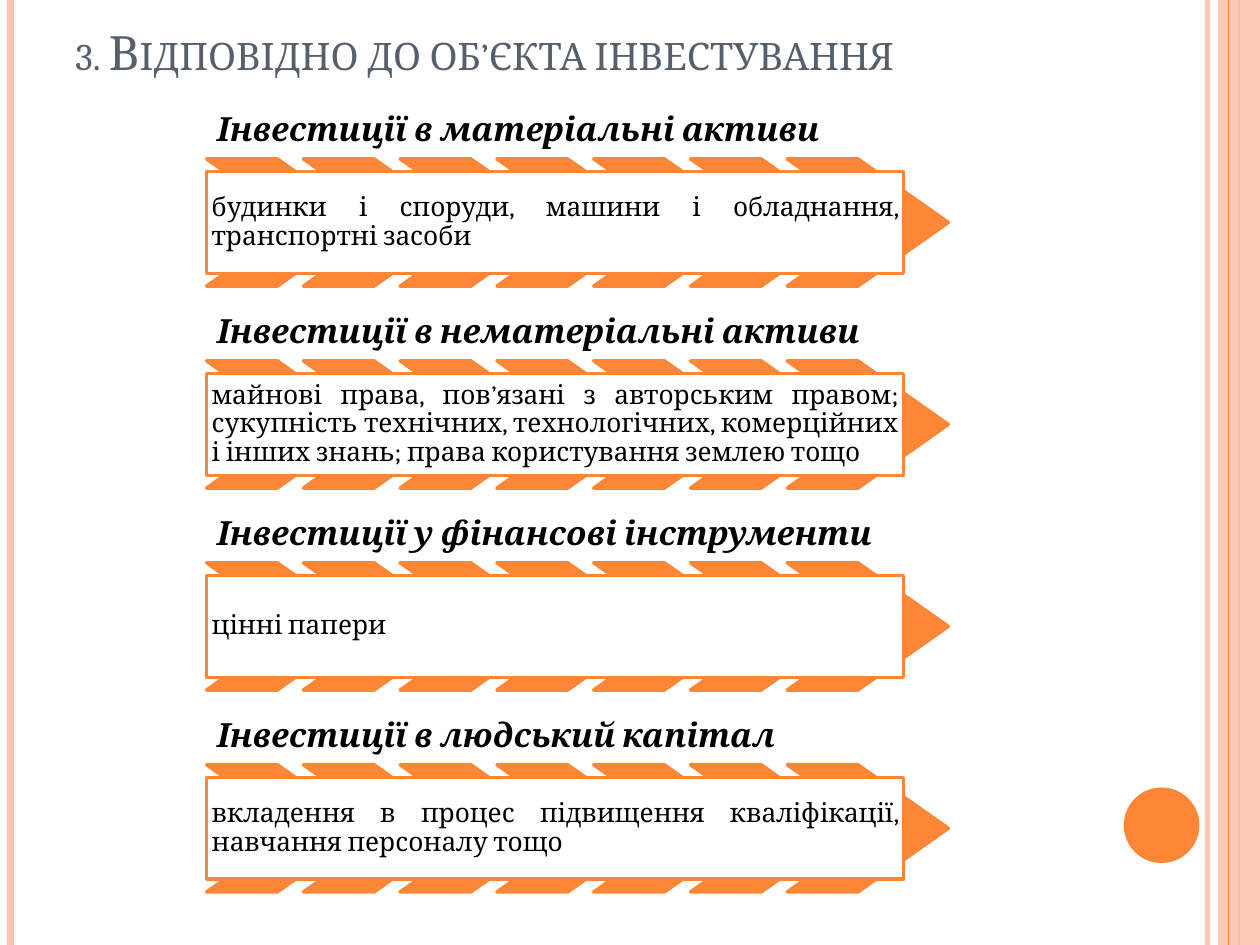
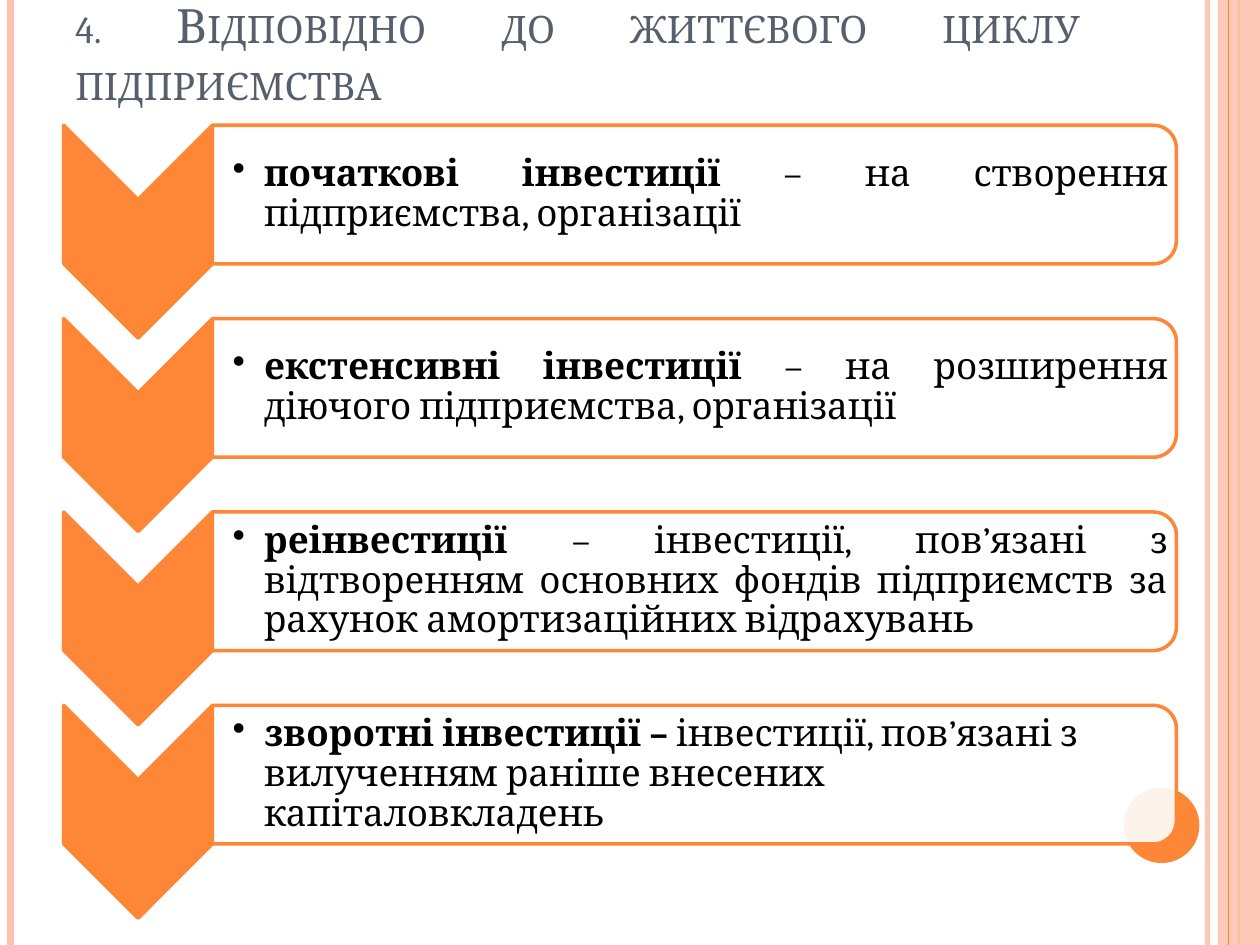
import pptx
import pptx.util
import pptx.dml.color
import pptx.enum.shapes
import pptx.enum.text
from lxml import etree

Pt = pptx.util.Pt
RGBColor = pptx.dml.color.RGBColor
Shape = pptx.enum.shapes.MSO_SHAPE
Anchor = pptx.enum.text.MSO_ANCHOR
Align = pptx.enum.text.PP_ALIGN

# Content
OBJECT_TITLE = "3. Відповідно до об’єкта інвестування"
OBJECTS = [
    ("Інвестиції в матеріальні активи",
     "будинки і споруди, машини і обладнання, транспортні засоби"),
    ("Інвестиції в нематеріальні активи",
     "майнові права, пов’язані з авторським правом; сукупність технічних, "
     "технологічних, комерційних і інших знань; права користування землею тощо"),
    ("Інвестиції у фінансові інструменти", "цінні папери"),
    ("Інвестиції в людський капітал",
     "вкладення в процес підвищення кваліфікації, навчання персоналу тощо"),
]
CYCLE_TITLE = "4. Відповідно до життєвого циклу підприємства"
CYCLE = [
    ("початкові інвестиції ", "– на створення підприємства, організації", Align.JUSTIFY),
    ("екстенсивні інвестиції ", "– на розширення діючого підприємства, організації",
     Align.JUSTIFY),
    ("реінвестиції ",
     "– інвестиції, пов’язані з відтворенням основних фондів підприємств "
     "за рахунок амортизаційних відрахувань", Align.JUSTIFY),
    ("зворотні інвестиції – ",
     "інвестиції, пов’язані з вилученням раніше внесених капіталовкладень", Align.LEFT),
]

# Shared look
FONT = "Cambria"
ORANGE = RGBColor(0xFE, 0x86, 0x37)
PEACH = RGBColor(0xFE, 0xC3, 0xAE)
SLATE = RGBColor(0x57, 0x5F, 0x6D)
BLACK = RGBColor(0, 0, 0)
WHITE = RGBColor(0xFF, 0xFF, 0xFF)
WIDTH, HEIGHT = 720, 540
OUTLINE = 2
DRAWING = "http://schemas.openxmlformats.org/drawingml/2006/main"

# Rows of the first slide
OBJECT_LEFT, OBJECT_TOP, OBJECT_PITCH = 118.1, 54.8, 115.4
HEADING_WIDTH, HEADING_HEIGHT = 393, 36
CHEVRON_COUNT, CHEVRON_STEP = 7, 55.3
CHEVRON_WIDTH, CHEVRON_HEIGHT = 92, 72.7
BOX_WIDTH, BOX_HEIGHT = 398.3, 58.2

# Rows of the second slide
CYCLE_LEFT, CYCLE_TOP, CYCLE_PITCH = 36.4, 71.6, 110.5
ARROW_WIDTH, ARROW_HEIGHT = 85, 121.6
PANEL_WIDTH, PANEL_HEIGHT = 550.8, 79.2


def tag(name):
    return f"{{{DRAWING}}}{name}"


def set_opacity(element, percent):
    """Make the first colour inside element partly transparent."""
    color = next(element.iter(tag("srgbClr")))
    etree.SubElement(color, tag("alpha"), val=str(percent * 1000))


def write(shape, text, size, color=BLACK, bold=False, italic=False, small_caps=False,
          align=Align.LEFT, anchor=Anchor.MIDDLE, insets=(7.2, 3.6, 7.2, 3.6),
          line_spacing=None, bullet_indent=None, rest=""):
    """Fill shape with one paragraph; rest follows text without bold."""
    frame = shape.text_frame
    frame.word_wrap = True
    frame.vertical_anchor = anchor
    (frame.margin_left, frame.margin_top,
     frame.margin_right, frame.margin_bottom) = map(Pt, insets)
    paragraph = frame.paragraphs[0]
    paragraph.alignment = align
    if line_spacing:
        paragraph.line_spacing = line_spacing
    if bullet_indent:
        properties = paragraph._p.get_or_add_pPr()
        properties.set("marL", str(Pt(bullet_indent)))
        properties.set("indent", str(-Pt(bullet_indent)))
        etree.SubElement(properties, tag("buChar"), char="•")
    for part, is_bold in ((text, bold), (rest, False)):
        if not part:
            continue
        run = paragraph.add_run()
        run.text = part
        run.font.name = FONT
        run.font.size = Pt(size)
        run.font.bold = is_bold
        run.font.italic = italic
        run.font.color.rgb = color
        if small_caps:
            run._r.get_or_add_rPr().set("cap", "small")


def add_text(slide, left, top, width, height, text, size, **style):
    box = slide.shapes.add_textbox(Pt(left), Pt(top), Pt(width), Pt(height))
    write(box, text, size, **style)


def add_shape(slide, kind, left, top, width, height, fill=ORANGE, line=ORANGE,
              opacity=None, quarter_turn=False):
    """Add a preset shape whose visible box is given, also when it is turned by 90°."""
    if quarter_turn:
        left, top = left + (width - height) / 2, top + (height - width) / 2
        width, height = height, width
    shape = slide.shapes.add_shape(kind, Pt(left), Pt(top), Pt(width), Pt(height))
    shape.shadow.inherit = False
    shape.rotation = 90 if quarter_turn else 0
    shape.fill.solid()
    shape.fill.fore_color.rgb = fill
    if opacity:
        set_opacity(shape._element.spPr, opacity)
    if line is None:
        shape.line.fill.background()
    else:
        shape.line.color.rgb = line
        shape.line.width = Pt(OUTLINE)
    return shape


def add_vertical_line(slide, x, color, width, opacity=None):
    line = slide.shapes.add_connector(
        pptx.enum.shapes.MSO_CONNECTOR.STRAIGHT, Pt(x), Pt(0), Pt(x), Pt(HEIGHT))
    line.line.color.rgb = color
    line.line.width = Pt(width)
    if opacity:
        set_opacity(line._element.spPr, opacity)
    etree.SubElement(line._element.spPr, tag("effectLst"))


def add_framed_slide(presentation, title, title_height):
    """Add a slide with the side bands, the corner disc and the title."""
    slide = presentation.slides.add_slide(presentation.slide_layouts[6])
    add_vertical_line(slide, 690, PEACH, 3, opacity=93)
    add_vertical_line(slide, 6, PEACH, 4.5)
    add_vertical_line(slide, 708, ORANGE, 1.5)
    add_shape(slide, Shape.RECTANGLE, 696, 0, 24, HEIGHT, PEACH, None, opacity=87)
    add_vertical_line(slide, 702, ORANGE, 0.75)
    add_shape(slide, Shape.OVAL, 642.2, 450, 43.2, 43.2, line=None)
    add_text(slide, 36, 9.4, 588.2, title_height, title, 27, color=SLATE,
             small_caps=True, align=Align.JUSTIFY, anchor=Anchor.BOTTOM)
    return slide


def add_object_row(slide, top, heading, details):
    add_text(slide, OBJECT_LEFT, top, HEADING_WIDTH, HEADING_HEIGHT, heading, 19,
             bold=True, italic=True, anchor=Anchor.BOTTOM, insets=(5.8,) * 4,
             line_spacing=0.9)
    chevron_top = top + HEADING_HEIGHT
    for index in range(CHEVRON_COUNT):
        chevron = add_shape(slide, Shape.CHEVRON, OBJECT_LEFT + index * CHEVRON_STEP,
                            chevron_top, CHEVRON_WIDTH, CHEVRON_HEIGHT)
        chevron.adjustments[0] = 0.71
    box_top = chevron_top + (CHEVRON_HEIGHT - BOX_HEIGHT) / 2
    box = add_shape(slide, Shape.RECTANGLE, OBJECT_LEFT, box_top,
                    BOX_WIDTH, BOX_HEIGHT, fill=WHITE)
    write(box, details, 15, align=Align.JUSTIFY, insets=(2.9,) * 4, line_spacing=0.9)


def add_cycle_row(slide, top, term, meaning, align):
    panel_left = CYCLE_LEFT + ARROW_WIDTH
    add_shape(slide, Shape.CHEVRON, CYCLE_LEFT, top, ARROW_WIDTH, ARROW_HEIGHT,
              quarter_turn=True)
    add_shape(slide, Shape.ROUND_2_SAME_RECTANGLE, panel_left, top,
              PANEL_WIDTH, PANEL_HEIGHT, fill=WHITE, opacity=90, quarter_turn=True)
    add_text(slide, panel_left, top + 4, PANEL_WIDTH - 4, PANEL_HEIGHT - 8, term, 21,
             bold=True, rest=meaning, align=align, insets=(11.5, 0.9, 0.9, 0.9),
             line_spacing=0.9, bullet_indent=18)


def main():
    presentation = pptx.Presentation()
    presentation.slide_width = Pt(WIDTH)
    presentation.slide_height = Pt(HEIGHT)

    slide = add_framed_slide(presentation, OBJECT_TITLE, 39.6)
    for index, row in enumerate(OBJECTS):
        add_object_row(slide, OBJECT_TOP + index * OBJECT_PITCH, *row)

    slide = add_framed_slide(presentation, CYCLE_TITLE, 56.9)
    for index, row in enumerate(CYCLE):
        add_cycle_row(slide, CYCLE_TOP + index * CYCLE_PITCH, *row)

    presentation.save("out.pptx")


if __name__ == "__main__":
    main()
